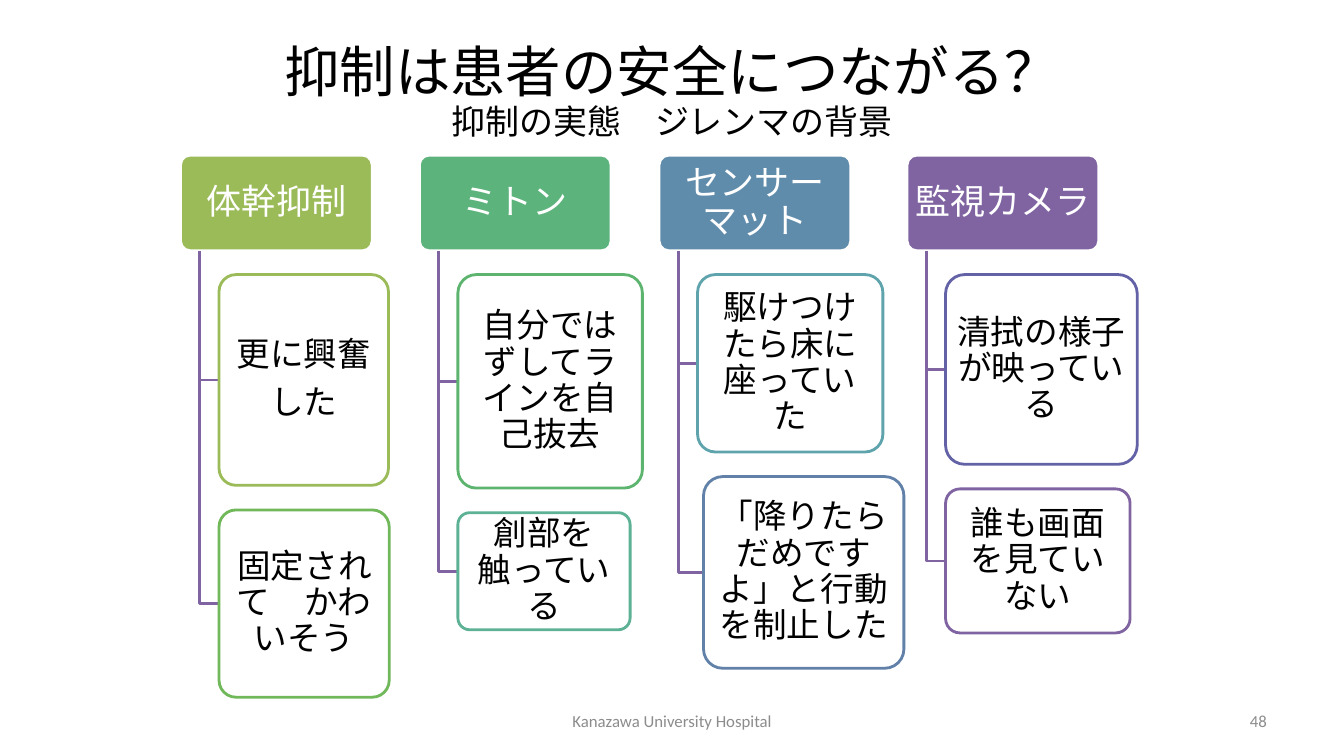
"""Builds the slide on restraint and patient safety."""
import lxml.etree
import pptx
import pptx.dml.color
import pptx.enum.shapes
import pptx.enum.text
import pptx.oxml.ns
import pptx.util

Cm = pptx.util.Cm
Pt = pptx.util.Pt
RGBColor = pptx.dml.color.RGBColor
Align = pptx.enum.text.PP_ALIGN

WHITE = RGBColor(0xFF, 0xFF, 0xFF)
BLACK = RGBColor(0, 0, 0)
GRAY = RGBColor(0x8C, 0x8C, 0x8C)
OLIVE = RGBColor(0x9B, 0xBB, 0x59)
LEAF = RGBColor(0x70, 0xB8, 0x5A)
GREEN = RGBColor(0x5C, 0xB3, 0x7C)
MEADOW = RGBColor(0x5C, 0xB4, 0x6F)
SEA = RGBColor(0x5D, 0xB1, 0x95)
STEEL = RGBColor(0x60, 0x8C, 0xAB)
TEAL = RGBColor(0x5F, 0xA4, 0xAD)
BLUE = RGBColor(0x61, 0x81, 0xA9)
INDIGO = RGBColor(0x63, 0x62, 0xA6)
PURPLE = RGBColor(0x80, 0x64, 0xA2)

HEADER_TOP, HEADER_WIDTH, HEADER_HEIGHT = 3.91, 4.83, 2.41
STEM_INDENT, CARD_INDENT = 0.48, 0.97
CARD_TOP, CARD_GAP = 6.92, 0.62

COLUMNS = [
    (4.55, "体幹抑制", OLIVE, [
        ("更に興奮\nした", OLIVE, CARD_INDENT, 4.27, 5.31),
        ("固定されて　かわいそう", LEAF, CARD_INDENT, 4.29, 4.72)]),
    (10.57, "ミトン", GREEN, [
        ("自分ではずしてラインを自己抜去", MEADOW, CARD_INDENT, 4.65, 5.38),
        ("創部を\v触っている", SEA, CARD_INDENT, 4.34, 2.95)]),
    (16.61, "センサー\vマット", STEEL, [
        ("駆けつけたら床に座っていた", TEAL, CARD_INDENT, 4.67, 4.47),
        ("「降りたらだめですよ」と行動を制止した", BLUE, 1.12, 5.05, 4.83)]),
    (22.86, "監視カメラ", PURPLE, [
        ("清拭の様子が映っている", INDIGO, CARD_INDENT, 4.83, 4.78),
        ("誰も画面を見ていない", PURPLE, CARD_INDENT, 4.65, 3.63)]),
]


class SlideBuilder:
    """Holds the style and the current slide."""

    font_name = "Calibri"
    line_width = Pt(2)

    def __init__(self, slide):
        self.slide = slide

    def format_paragraph(self, paragraph, size, color, alignment=Align.CENTER):
        """Set the font and alignment of a paragraph."""
        paragraph.alignment = alignment
        paragraph.font.name = self.font_name
        paragraph.font.color.rgb = color
        if size:
            paragraph.font.size = Pt(size)

    def title(self, lines):
        """Fill the title placeholder with lines of different sizes."""
        title = self.slide.shapes.title
        title.left, title.top = Cm(1.7), Cm(0.76)
        title.width, title.height = Cm(30.48), Cm(3.18)
        frame = title.text_frame
        frame.auto_size = pptx.enum.text.MSO_AUTO_SIZE.NONE
        frame.vertical_anchor = pptx.enum.text.MSO_ANCHOR.MIDDLE
        paragraph = frame.paragraphs[0]
        for index, (text, size) in enumerate(lines):
            if index:
                paragraph.add_line_break()
            run = paragraph.add_run()
            run.text = text
            run.font.size = Pt(size)
        paragraph.line_spacing = 0.9
        self.format_paragraph(paragraph, None, BLACK)

    def box(self, text, left, top, width, height, fill, line, size, color, inset):
        """Add a rounded box with centred text."""
        shape = self.slide.shapes.add_shape(
            pptx.enum.shapes.MSO_SHAPE.ROUNDED_RECTANGLE,
            Cm(left), Cm(top), Cm(width), Cm(height))
        shape.adjustments[0] = 0.1
        shape.shadow.inherit = False
        shape.fill.solid()
        shape.fill.fore_color.rgb = fill
        shape.line.color.rgb = line
        shape.line.width = self.line_width
        frame = shape.text_frame
        frame.word_wrap = True
        frame.vertical_anchor = pptx.enum.text.MSO_ANCHOR.MIDDLE
        frame.margin_left = frame.margin_right = Cm(inset)
        frame.margin_top = frame.margin_bottom = Cm(0.08)
        frame.text = text
        for paragraph in frame.paragraphs:
            paragraph.line_spacing = 0.9
            paragraph.space_after = Pt(8.4)
            self.format_paragraph(paragraph, size, color)
        return shape

    def header(self, text, left, color):
        """Add the heading of a column."""
        self.box(text, left, HEADER_TOP, HEADER_WIDTH, HEADER_HEIGHT,
                 color, WHITE, 25, WHITE, 0.1)

    def card(self, text, left, top, width, height, color):
        """Add an outlined card with a slightly transparent fill."""
        shape = self.box(text, left, top, width, height, WHITE, color, 24, BLACK, 0.13)
        qn = pptx.oxml.ns.qn
        fill_color = shape.fill._xPr.find(qn("a:solidFill")).find(qn("a:srgbClr"))
        lxml.etree.SubElement(fill_color, qn("a:alpha"), val="90000")

    def elbow(self, left, top, right, bottom):
        """Add a line that goes down and then right."""
        builder = self.slide.shapes.build_freeform(Cm(left), Cm(top))
        builder.add_line_segments(
            [(Cm(left), Cm(bottom)), (Cm(right), Cm(bottom))], close=False)
        shape = builder.convert_to_shape()
        shape.shadow.inherit = False
        shape.fill.background()
        shape.line.color.rgb = PURPLE
        shape.line.width = self.line_width

    def column(self, left, heading, color, cards):
        """Add a heading with its cards joined below."""
        self.header(heading, left, color)
        top = CARD_TOP
        for text, outline, indent, width, height in cards:
            self.elbow(left + STEM_INDENT, HEADER_TOP + HEADER_HEIGHT,
                       left + indent, top + height / 2)
            self.card(text, left + indent, top, width, height, outline)
            top += height + CARD_GAP

    def footer(self, text, left, width, alignment):
        """Add small gray text at the foot of the slide."""
        shape = self.slide.shapes.add_textbox(Cm(left), Cm(17.65), Cm(width), Cm(1.02))
        frame = shape.text_frame
        frame.word_wrap = True
        frame.vertical_anchor = pptx.enum.text.MSO_ANCHOR.MIDDLE
        frame.text = text
        self.format_paragraph(frame.paragraphs[0], 12, GRAY, alignment)


def main():
    """Build and save the presentation."""
    presentation = pptx.Presentation()
    presentation.slide_width, presentation.slide_height = Cm(33.87), Cm(19.05)
    builder = SlideBuilder(
        presentation.slides.add_slide(presentation.slide_layouts[5]))
    builder.title([("抑制は患者の安全につながる？", 39.6),
                   ("抑制の実態　ジレンマの背景", 24.3)])
    for column in COLUMNS:
        builder.column(*column)
    builder.footer("48", 24.28, 7.9, Align.RIGHT)
    builder.footer("Kanazawa University Hospital", 11.58, 10.72, Align.CENTER)
    presentation.save("out.pptx")


if __name__ == "__main__":
    main()
